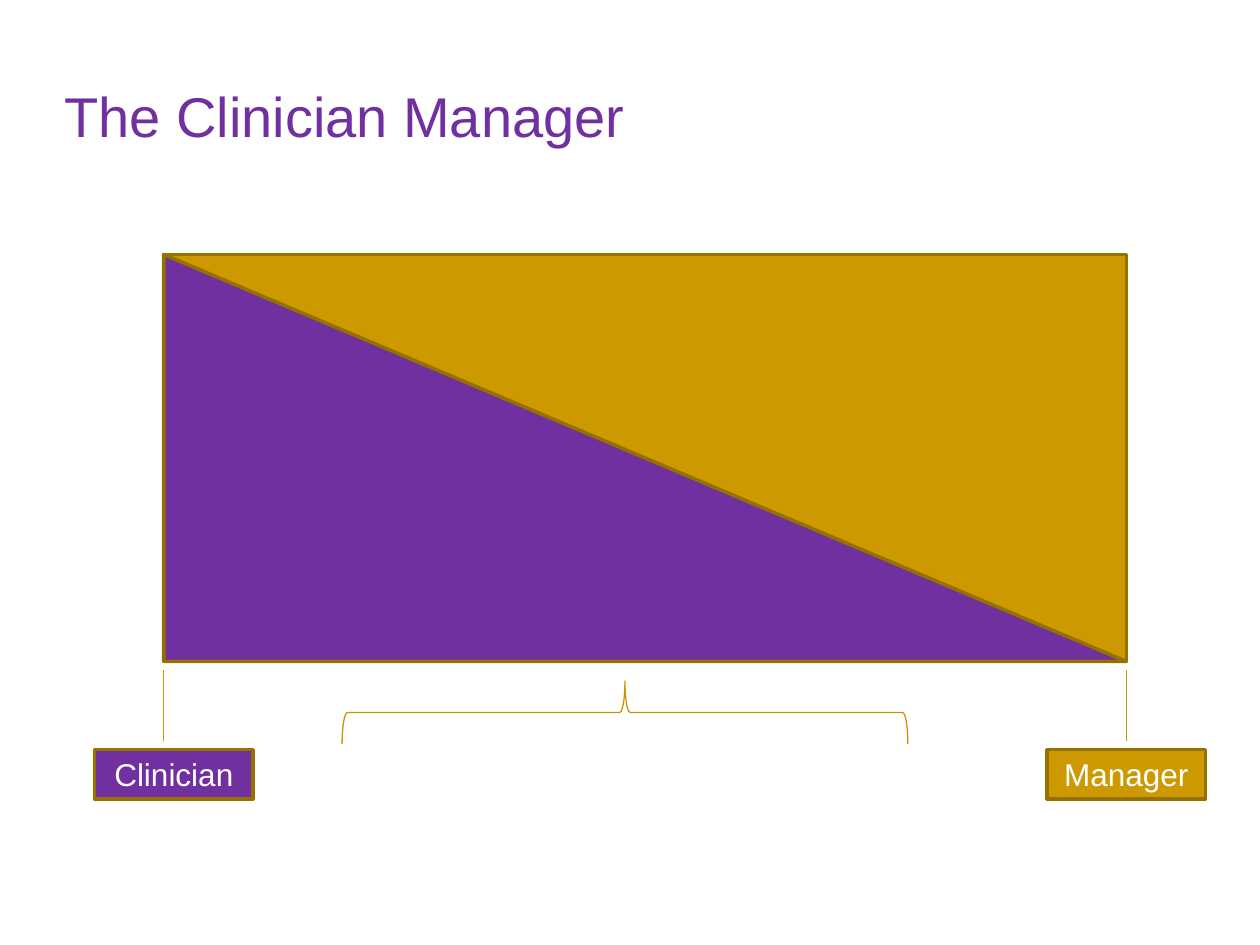
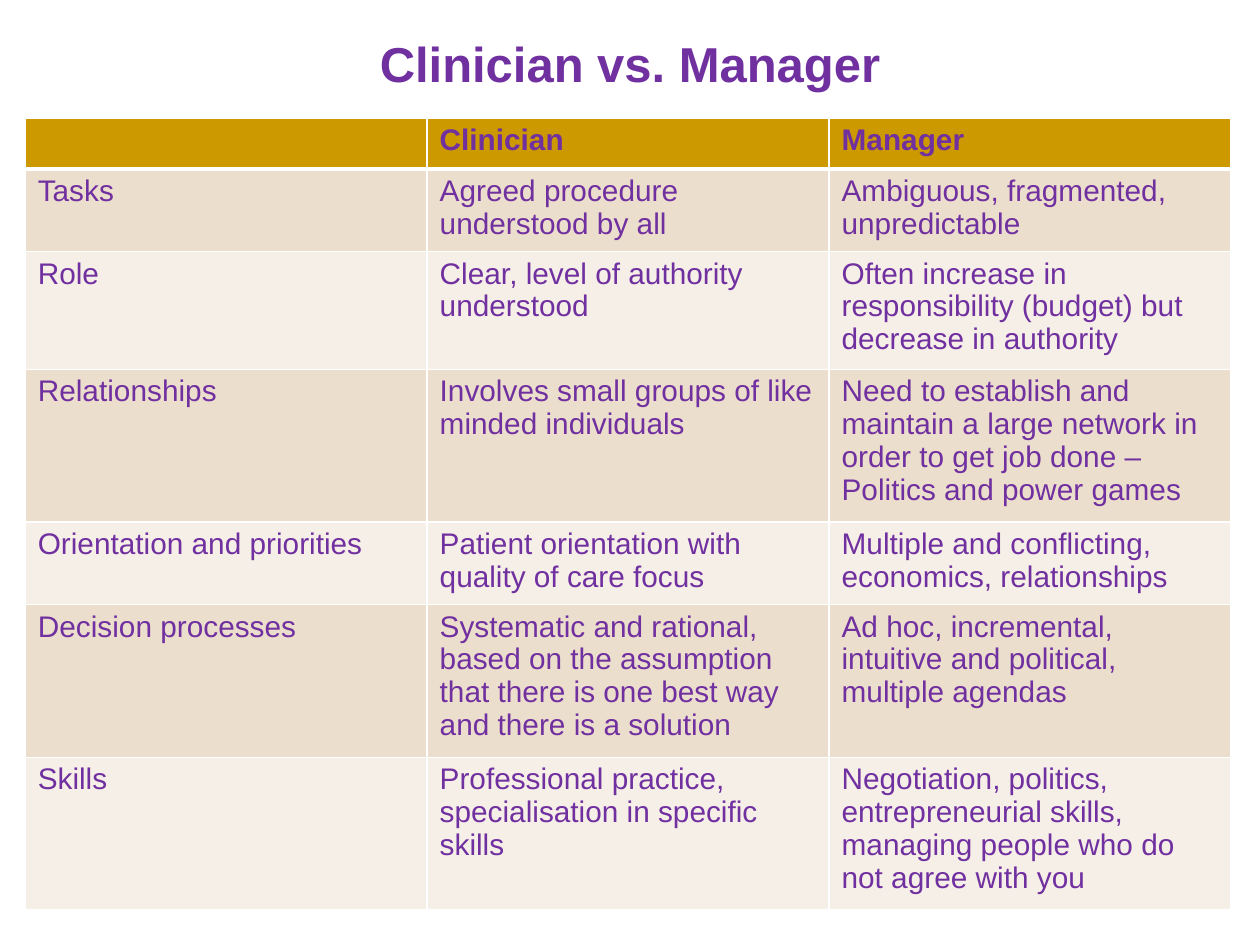
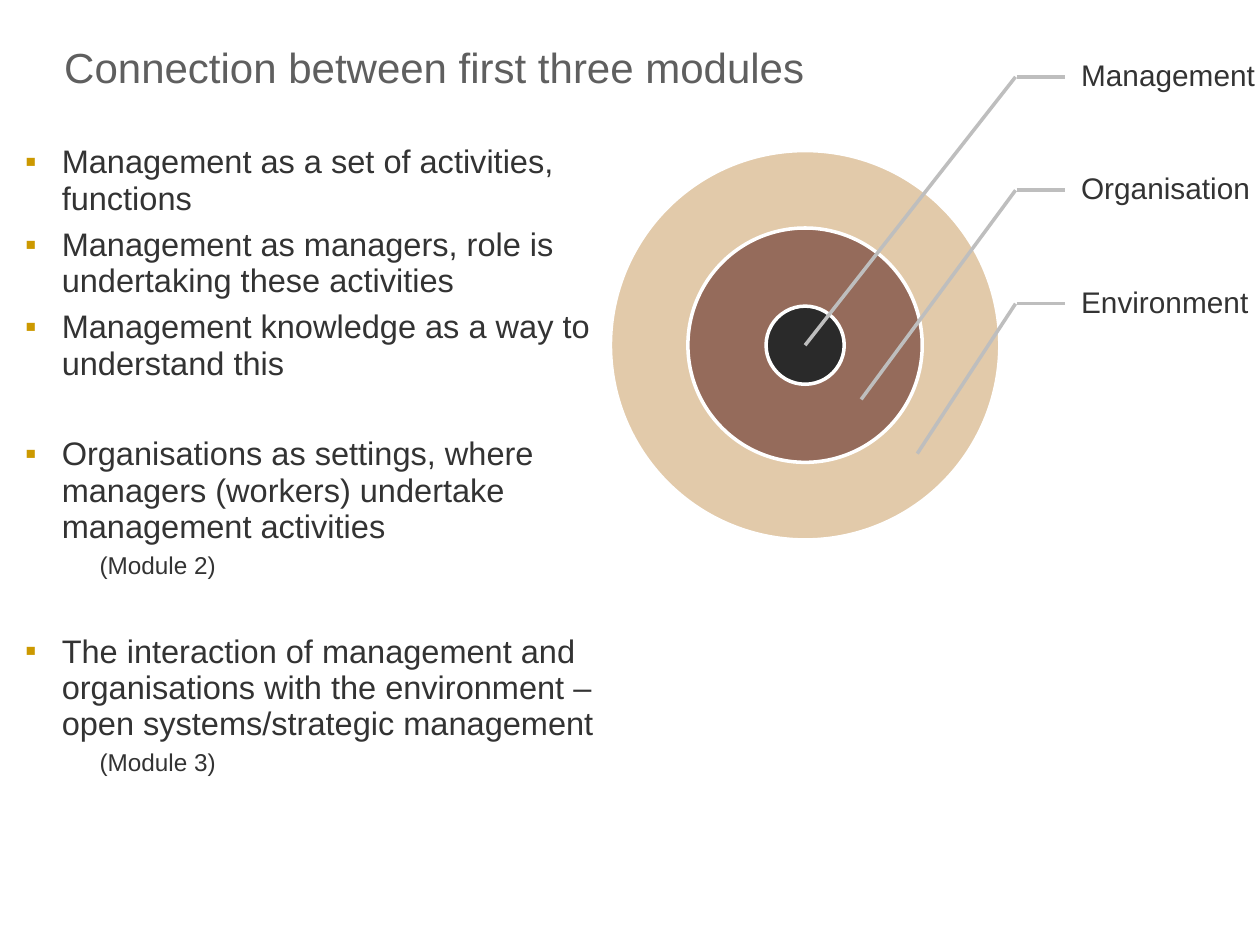
from dataclasses import dataclass

from pptx import Presentation
from pptx.dml.color import RGBColor
from pptx.enum.shapes import MSO_CONNECTOR as Link, MSO_SHAPE as Shape
from pptx.enum.text import MSO_ANCHOR as Anchor, PP_ALIGN as Align
from pptx.oxml.ns import qn
from pptx.util import Inches, Pt
from lxml.etree import SubElement


@dataclass(frozen=True)
class Theme:
    font: str = "Arial"
    purple: str = "7030A0"
    gold: str = "CC9900"
    edge: str = "977100"
    thin_gold: str = "C89600"
    white: str = "FFFFFF"
    ink: str = "333333"
    grey: str = "5F5F5F"
    leader: str = "BEBEBE"
    bands: tuple = ("ECDECC", "F6EFE7")
    rings: tuple = ("E2CAAA", "956B5B", "2A2A2A")
    tag_size: float = 18
    small_size: float = 17
    body_size: float = 18.6
    note_size: float = 13.9


THEME = Theme()

# Content
TAGS = [("Clinician", THEME.purple, 1.3, 0.75), ("Manager", THEME.gold, 8.94, 8.31)]

COMPARISON = [
    ("", "Clinician", "Manager"),
    ("Tasks", "Agreed procedure understood by all",
     "Ambiguous, fragmented, unpredictable"),
    ("Role", "Clear, level of authority understood",
     "Often increase in responsibility (budget) but decrease in authority"),
    ("Relationships", "Involves small groups of like minded individuals",
     "Need to establish and maintain a large network in order to get job done – "
     "Politics and power games"),
    ("Orientation and priorities", "Patient orientation with quality of care focus",
     "Multiple and conflicting, economics, relationships"),
    ("Decision processes",
     "Systematic and rational, based on the assumption that there is one best way "
     "and there is a solution",
     "Ad hoc, incremental, intuitive and political, multiple agendas"),
    ("Skills", "Professional practice, specialisation in specific skills",
     "Negotiation, politics, entrepreneurial skills, managing people who do not "
     "agree with you"),
]
ROW_HEIGHTS = [0.37, 0.63, 0.9, 1.16, 0.63, 1.16, 1.16]

# Text, kind and space before in points
MODULE_POINTS = [
    ("Management as a set of activities, functions", "bullet", 5.6),
    ("Management as managers, role is undertaking these activities", "bullet", 5.6),
    ("Management knowledge as a way to understand this", "bullet", 5.6),
    ("Organisations as settings, where managers (workers) undertake management "
     "activities", "bullet", 31),
    ("(Module 2)", "note", 4),
    ("The interaction of management and organisations with the environment – open "
     "systems/strategic management", "bullet", 31),
    ("(Module 3)", "note", 4),
]
RING_DIAMETERS = [3.09, 1.86, 0.62]
RING_LABELS = ["Management", "Organisation", "Environment"]


# Shared helpers
def rgb(code):
    return RGBColor.from_string(code)


def add_span(para, text, size, color, bold=False):
    span = para.add_run()
    span.text = text
    span.font.name = THEME.font
    span.font.size = Pt(size)
    span.font.color.rgb = rgb(color)
    span.font.bold = bold


def add_box(page, left, top, width, height, margins=(0, 0, 0, 0)):
    box = page.shapes.add_textbox(*map(Inches, (left, top, width, height)))
    frame = box.text_frame
    frame.word_wrap = True
    (frame.margin_left, frame.margin_top,
     frame.margin_right, frame.margin_bottom) = map(Inches, margins)
    return box


def add_title(page, text, top, size, color, bold=False, align=Align.LEFT, width=8.98):
    box = add_box(page, 0.51, top, width, 0.7, (0, 0.04, 0, 0))
    para = box.text_frame.paragraphs[0]
    para.alignment = align
    add_span(para, text, size, color, bold)


def add_figure(page, kind, left, top, width, height, fill, line, weight=2):
    figure = page.shapes.add_shape(kind, *map(Inches, (left, top, width, height)))
    figure.shadow.inherit = False
    if fill:
        figure.fill.solid()
        figure.fill.fore_color.rgb = rgb(fill)
    else:
        figure.fill.background()
    figure.line.color.rgb = rgb(line)
    figure.line.width = Pt(weight)
    return figure


def add_line(page, start, end, color, weight):
    line = page.shapes.add_connector(Link.STRAIGHT, *map(Inches, (*start, *end)))
    line.line.color.rgb = rgb(color)
    line.line.width = Pt(weight)
    SubElement(line._element.spPr, qn("a:effectLst"))
    return line


def set_borders(cell, bottom):
    """Draw white borders, with the given weight below the cell."""
    props = cell._tc.get_or_add_tcPr()
    for index, (side, weight) in enumerate(
            [("lnL", 1), ("lnR", 1), ("lnT", 1), ("lnB", bottom)]):
        border = props.makeelement(qn(f"a:{side}"), {"w": str(Pt(weight))})
        fill = SubElement(border, qn("a:solidFill"))
        SubElement(fill, qn("a:srgbClr"), val=THEME.white)
        props.insert(index, border)


def set_list_style(para, kind):
    """Indent a paragraph and give bullets a gold square."""
    props = para._p.get_or_add_pPr()
    if kind == "note":
        props.set("marL", str(Inches(0.59)))
        return
    props.set("marL", str(Inches(0.29)))
    props.set("indent", str(-Inches(0.29)))
    color = SubElement(props, qn("a:buClr"))
    SubElement(color, qn("a:srgbClr"), val=THEME.gold)
    SubElement(props, qn("a:buFont"), typeface=THEME.font)
    SubElement(props, qn("a:buChar"), char="▪")


# Slides
def build_continuum(page):
    add_title(page, "The Clinician Manager", 0.61, 32, THEME.purple)
    for kind, fill in ((Shape.RECTANGLE, THEME.gold), (Shape.RIGHT_TRIANGLE, THEME.purple)):
        add_figure(page, kind, 1.3, 2.02, 7.64, 3.23, fill, THEME.edge)
    for text, fill, line_x, left in TAGS:
        add_line(page, (line_x, 5.32), (line_x, 5.88), THEME.thin_gold, 0.75)
        tag = add_figure(page, Shape.RECTANGLE, left, 5.95, 1.26, 0.39, fill, THEME.edge)
        tag.text_frame.vertical_anchor = Anchor.MIDDLE
        para = tag.text_frame.paragraphs[0]
        para.alignment = Align.CENTER
        add_span(para, text, THEME.tag_size, THEME.white)
    brace = add_figure(page, Shape.RIGHT_BRACE, 4.71, 3.41, 0.5, 4.49,
                       None, THEME.thin_gold, 0.75)
    brace.rotation = 270


def build_comparison(page):
    add_title(page, "Clinician vs. Manager", 0.23, 28, THEME.purple, True, Align.CENTER)
    table = page.shapes.add_table(
        len(COMPARISON), 3, Inches(0.2), Inches(0.94),
        Inches(9.57), Inches(sum(ROW_HEIGHTS))).table
    for column in table.columns:
        column.width = Inches(3.19)
    for r, (texts, height) in enumerate(zip(COMPARISON, ROW_HEIGHTS)):
        header = r == 0
        table.rows[r].height = Inches(height)
        for c, text in enumerate(texts):
            cell = table.cell(r, c)
            cell.fill.solid()
            cell.fill.fore_color.rgb = rgb(THEME.gold if header else THEME.bands[(r - 1) % 2])
            set_borders(cell, 3 if header else 1)
            if text:
                para = cell.text_frame.paragraphs[0]
                para.line_spacing = 0.98
                add_span(para, text, THEME.small_size, THEME.purple, header)


def build_modules(page):
    add_title(page, "Connection between first three modules", 0.29, 24, THEME.grey, width=6.22)

    # Bulleted text
    frame = add_box(page, 0.2, 1.15, 4.72, 5.59).text_frame
    for index, (text, kind, space) in enumerate(MODULE_POINTS):
        para = frame.add_paragraph() if index else frame.paragraphs[0]
        para.line_spacing = 0.93
        para.space_before = Pt(space)
        set_list_style(para, kind)
        size = THEME.body_size if kind == "bullet" else THEME.note_size
        add_span(para, text, size, THEME.ink)

    # Concentric rings
    center_x, center_y = 6.39, 2.74
    for diameter, fill in zip(RING_DIAMETERS, THEME.rings):
        add_figure(page, Shape.OVAL, center_x - diameter / 2, center_y - diameter / 2,
                   diameter, diameter, fill, THEME.white)

    # Labels with leaders
    for index, text in enumerate(RING_LABELS):
        top = 0.16 + 0.9 * index
        middle = top + 0.45
        box = add_box(page, 8.45, top, 1.55, 0.9, (0.13, 0.02, 0.02, 0.02))
        box.text_frame.vertical_anchor = Anchor.MIDDLE
        para = box.text_frame.paragraphs[0]
        para.line_spacing = 0.9
        add_span(para, text, THEME.small_size, THEME.ink)
        arm = add_line(page, (8.07, middle), (8.45, middle), THEME.leader, 2)
        arm.end_connect(box, 1)
        target = (center_x + 0.445 * index, center_y + 0.43 * index)
        add_line(page, (8.06, middle), target, THEME.leader, 2)


def main():
    deck = Presentation()
    deck.slide_width, deck.slide_height = Inches(10), Inches(7.5)
    for build in (build_continuum, build_comparison, build_modules):
        build(deck.slides.add_slide(deck.slide_layouts[6]))
    deck.save("out.pptx")


if __name__ == "__main__":
    main()
